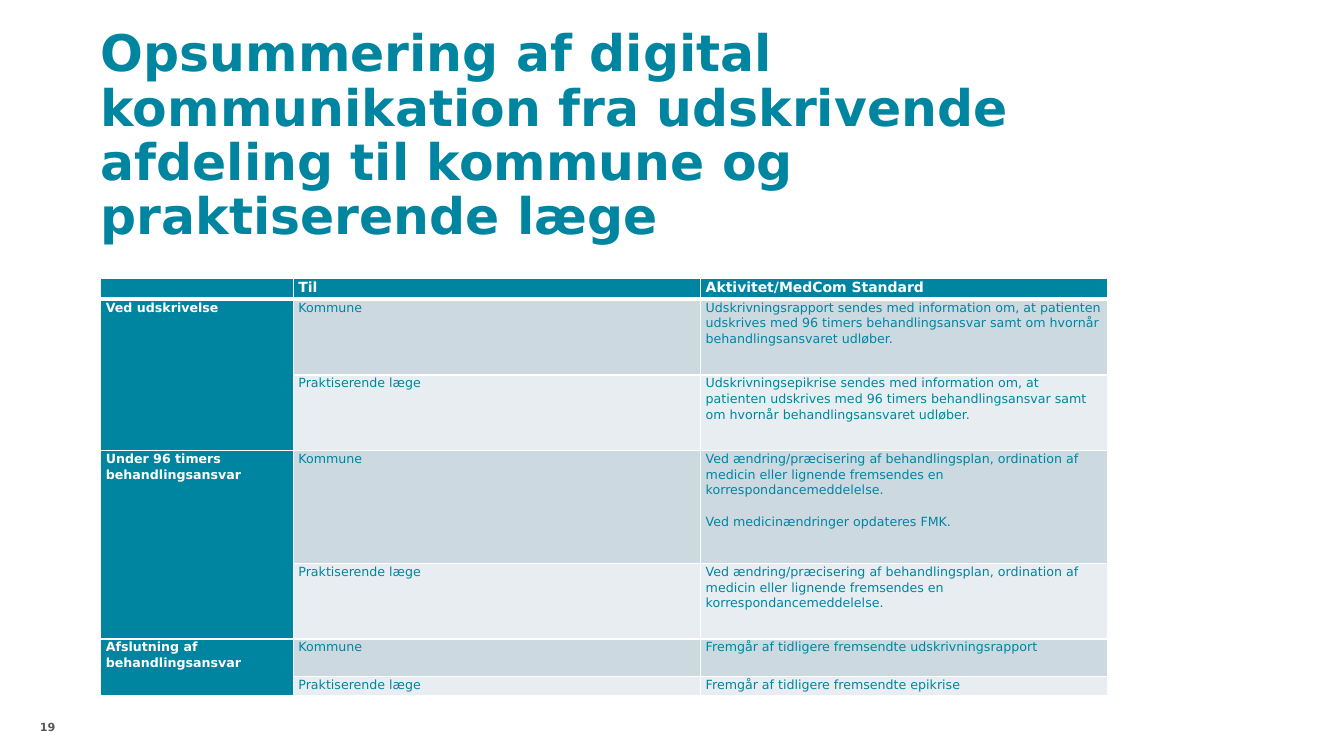
import pptx
import pptx.dml.color
import pptx.enum.text
import pptx.util
from lxml import etree
from pptx.oxml.ns import qn

Inches, Pt = pptx.util.Inches, pptx.util.Pt
ANCHOR = pptx.enum.text.MSO_ANCHOR
ALIGN = pptx.enum.text.PP_ALIGN

FONT = "DejaVu Sans"
TEAL, TEXT_TEAL, WHITE, GREY = "0085A1", "0085A0", "FFFFFF", "595959"
BANDS = ["CCD9E0", "E7EDF0"]

TITLE = ("Opsummering af digital kommunikation fra udskrivende afdeling "
         "til kommune og praktiserende læge")
HEADERS = ["", "Til", "Aktivitet/MedCom Standard"]
RECIPIENTS = ["Kommune", "Praktiserende læge"]
DISCHARGE = ("sendes med information om, at patienten udskrives med 96 timers "
             "behandlingsansvar samt om hvornår behandlingsansvaret udløber.")
CHANGE = ("Ved ændring/præcisering af behandlingsplan, ordination af medicin "
          "eller lignende fremsendes en korrespondancemeddelelse.")
# Each phase has one list of paragraphs per recipient
PHASES = [
    ("Ved udskrivelse",
     [["Udskrivningsrapport " + DISCHARGE], ["Udskrivningsepikrise " + DISCHARGE]]),
    ("Under 96 timers behandlingsansvar",
     [[CHANGE, "Ved medicinændringer opdateres FMK."], [CHANGE]]),
    ("Afslutning af behandlingsansvar",
     [["Fremgår af tidligere fremsendte udskrivningsrapport"],
      ["Fremgår af tidligere fremsendte epikrise"]]),
]
COL_WIDTHS = [1.91, 4.04, 4.04]
ROW_HEIGHTS = [0.21, 0.75, 0.75, 1.12, 0.75, 0.37, 0.19]


def rgb(color):
    return pptx.dml.color.RGBColor.from_string(color)


def write(tf, *paragraphs, size, color, bold=False, align=ALIGN.LEFT,
          spacing=1.0, gap=0):
    """Fill a text frame; gap is the space in points between paragraphs."""
    for i, text in enumerate(paragraphs):
        p = tf.add_paragraph() if i else tf.paragraphs[0]
        p.alignment, p.line_spacing = align, spacing
        p.space_before = Pt(gap if i else 0)
        if not text:
            etree.SubElement(p._p, qn("a:endParaRPr"), sz=str(size * 100))
            continue
        r = p.add_run()
        r.text = text
        r.font.name, r.font.size, r.font.bold = FONT, Pt(size), bold
        r.font.color.rgb = rgb(color)


def clear_insets(tf):
    tf.word_wrap = True
    tf.auto_size = pptx.enum.text.MSO_AUTO_SIZE.NONE
    tf.margin_left = tf.margin_top = tf.margin_right = tf.margin_bottom = 0


def add_borders(cell, **widths):
    """Draw white cell borders, 1 pt unless a side (L, R, T, B) is given."""
    tcPr = cell._tc.get_or_add_tcPr()
    for side in "LRTB":
        ln = etree.SubElement(tcPr, qn("a:ln" + side),
                              w=str(Pt(widths.get(side, 1))))
        fill = etree.SubElement(ln, qn("a:solidFill"))
        etree.SubElement(fill, qn("a:srgbClr"), val=WHITE)


def fill_cell(cell, fill, *paragraphs, **fmt):
    cell.margin_left = cell.margin_right = Inches(0.05)
    cell.margin_top = cell.margin_bottom = 0
    cell.fill.solid()
    cell.fill.fore_color.rgb = rgb(fill)
    write(cell.text_frame, *paragraphs, spacing=1.07, **fmt)


def add_title(s, left, top, width, height):
    sp = s.shapes.title
    sp.left, sp.top = Inches(left), Inches(top)
    sp.width, sp.height = Inches(width), Inches(height)
    tf = sp.text_frame
    clear_insets(tf)
    tf.vertical_anchor = ANCHOR.BOTTOM
    write(tf, TITLE, size=36, color=TEAL, bold=True, spacing=0.9)


def add_phase_table(s, left, top):
    table = s.shapes.add_table(
        len(ROW_HEIGHTS), len(COL_WIDTHS), Inches(left), Inches(top),
        Inches(sum(COL_WIDTHS)), Inches(sum(ROW_HEIGHTS))).table
    for col, width in zip(table.columns, COL_WIDTHS):
        col.width = Inches(width)
    for i, (row, height) in enumerate(zip(table.rows, ROW_HEIGHTS)):
        row.height = Inches(height)
        for cell in row.cells:
            add_borders(cell, B=3 if i == 0 else 1, T=3 if i == 1 else 1)

    for c, header in enumerate(HEADERS):
        fill_cell(table.cell(0, c), TEAL, header, size=10, color=WHITE, bold=True)
    for i, (phase, activities) in enumerate(PHASES):
        first = 1 + 2 * i
        for j, paragraphs in enumerate(activities):
            row = first + j
            fill_cell(table.cell(row, 0), TEAL, "" if j else phase,
                      size=9, color=WHITE, bold=True)
            fill_cell(table.cell(row, 1), BANDS[j], RECIPIENTS[j],
                      size=9, color=TEXT_TEAL)
            fill_cell(table.cell(row, 2), BANDS[j], *paragraphs,
                      size=9, color=TEXT_TEAL, gap=11.25)
        table.cell(first, 0).merge(table.cell(first + 1, 0))


def add_page_number(s, left, top, width, height):
    sp = s.shapes.add_textbox(Inches(left), Inches(top), Inches(width), Inches(height))
    clear_insets(sp.text_frame)
    write(sp.text_frame, "19", size=8, color=GREY, bold=True, align=ALIGN.RIGHT)


def main():
    prs = pptx.Presentation()
    prs.slide_width, prs.slide_height = Inches(13.33), Inches(7.5)
    s = prs.slides.add_slide(prs.slide_layouts[5])
    add_title(s, 1, 1.26, 10.55, 1.18)
    add_phase_table(s, 1, 2.76)
    add_page_number(s, 0.16, 7.15, 0.39, 0.35)
    prs.save("out.pptx")


if __name__ == "__main__":
    main()
